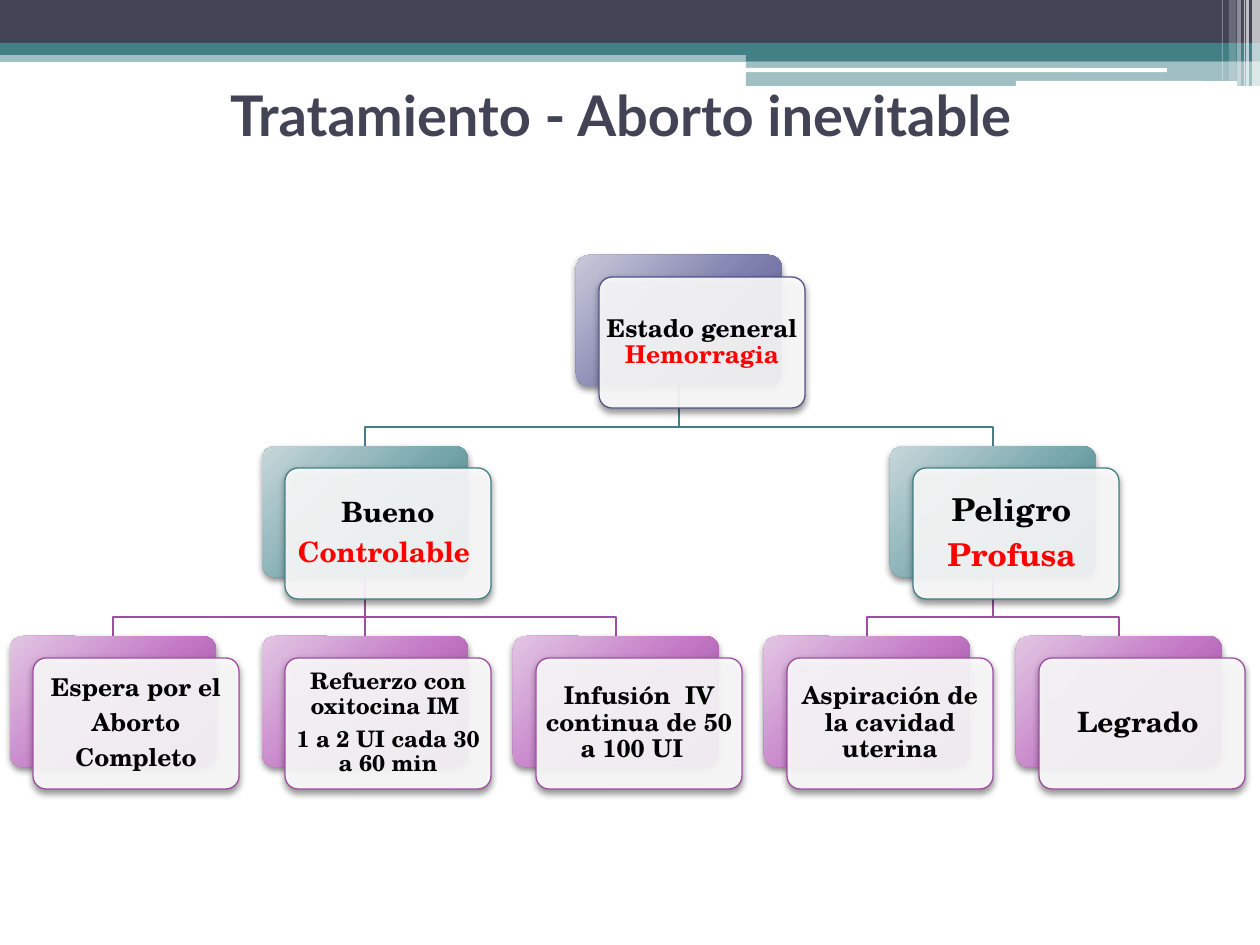
"""Build the slide with the treatment tree for inevitable abortion."""
from dataclasses import dataclass
from typing import Iterator, Optional

from pptx import Presentation
from pptx.dml.color import RGBColor
from pptx.enum.shapes import MSO_CONNECTOR, MSO_SHAPE
from pptx.enum.text import MSO_ANCHOR, PP_ALIGN
from pptx.oxml import parse_xml
from pptx.oxml.ns import nsdecls, qn
from pptx.util import Pt

SCALE = 914400 / 126
COLORS = {
    "ink": "424456", "teal": "438086", "white": "FFFFFF", "black": "000000",
    "red": "FF0000", "indigo": "53548A", "purple": "A04DA3",
}
GRADIENTS = {
    "indigo": ("C9C9DA", "7F80AE", "4D4E81"),
    "teal": ("C7D7DA", "77A7AD", "3E777D"),
    "purple": ("E2C6E3", "C277C5", "954898"),
}
LEVEL_COLORS = ("indigo", "teal", "purple")
TREE_LEFT, TREE_TOP = 10, 255
COLUMN_STEP, LEVEL_STEP = 251.5, 190.5
CARD_WIDTH, CARD_HEIGHT = 206, 131
FRONT_DX, FRONT_DY = 23, 22
BRANCH_GAP = 19

Run = tuple[str, str]
Paragraphs = tuple[tuple[Run, ...], ...]


@dataclass(frozen=True)
class Band:
    left: int
    top: int
    width: int
    height: int
    color: str
    opacity: int = 100
    rounded: bool = False


@dataclass(frozen=True)
class Node:
    paragraphs: Paragraphs
    size: int
    level: int
    column: Optional[int] = None
    children: tuple["Node", ...] = ()

    @property
    def position(self) -> float:
        if not self.children:
            return self.column
        return sum(child.position for child in self.children) / len(self.children)

    @property
    def left(self) -> int:
        return round(TREE_LEFT + COLUMN_STEP * self.position)

    @property
    def top(self) -> int:
        return round(TREE_TOP + LEVEL_STEP * self.level)

    @property
    def center(self) -> int:
        return self.left + CARD_WIDTH // 2

    @property
    def color(self) -> str:
        return LEVEL_COLORS[self.level]


def leaf(column: int, size: int, *lines: str) -> Node:
    return Node(tuple(((line, "black"),) for line in lines), size, 2, column)


HEADER = (
    Band(0, 50, 1260, 12, "teal", 50),
    Band(0, 0, 1260, 43, "ink"),
    Band(0, 43, 1260, 12, "teal"),
    Band(746, 49, 514, 12, "teal"),
    Band(746, 61, 514, 25, "teal", 50),
    Band(745, 68, 422, 4, "white", rounded=True),
    Band(1016, 81, 221, 5, "white", rounded=True),
    Band(1252, 0, 8, 86, "white", 65),
    Band(1246, 0, 3, 86, "white", 65),
    Band(1244, 0, 1, 86, "white", 60),
    Band(1237, 0, 4, 86, "white", 40),
    Band(1229, 0, 7, 81, "white", 20),
    Band(1222, 0, 1, 81, "white", 30),
)
CONTROLLABLE = Node(
    ((("Bueno", "black"),), (("Controlable ", "red"),)), 16, 1,
    children=(
        leaf(0, 14, "Espera por el", "Aborto", "Completo"),
        leaf(1, 13, "Refuerzo con oxitocina IM ", "1 a 2 UI cada 30 a 60 min"),
        leaf(2, 14, "Infusión  IV continua de 50 a 100 UI  "),
    ),
)
PROFUSE = Node(
    ((("Peligro ", "black"),), (("Profusa ", "red"),)), 18, 1,
    children=(
        leaf(3, 14, "Aspiración de la cavidad uterina"),
        leaf(4, 16, "Legrado "),
    ),
)
ASSESSMENT = Node(
    ((("Estado general ", "black"), ("Hemorragia", "red")),), 14, 0,
    children=(CONTROLLABLE, PROFUSE),
)


def px(value: float) -> int:
    return round(value * SCALE)


def rgb(color: str) -> RGBColor:
    return RGBColor.from_string(COLORS[color])


def add_box(slide, left: int, top: int, width: int, height: int, color: str,
            opacity: int = 100, corner: Optional[float] = None):
    kind = MSO_SHAPE.RECTANGLE if corner is None else MSO_SHAPE.ROUNDED_RECTANGLE
    box = slide.shapes.add_shape(kind, px(left), px(top), px(width), px(height))
    if corner is not None:
        box.adjustments[0] = corner
    box.shadow.inherit = False
    box.line.fill.background()
    box.fill.solid()
    box.fill.fore_color.rgb = rgb(color)
    if opacity < 100:
        tint = box.element.spPr.find(qn("a:solidFill")).find(qn("a:srgbClr"))
        tint.append(parse_xml(f'<a:alpha {nsdecls("a")} val="{opacity * 1000}"/>'))
    return box


def add_text(slide, paragraphs: Paragraphs, *, left: int, top: int, width: int,
             height: int, size: int, font: str, inset: int,
             line_spacing: float = 1.0, after_percent: int = 0) -> None:
    frame = slide.shapes.add_textbox(px(left), px(top), px(width), px(height)).text_frame
    frame.word_wrap = True
    frame.vertical_anchor = MSO_ANCHOR.MIDDLE
    frame.margin_left = frame.margin_right = px(inset)
    frame.margin_top = frame.margin_bottom = px(inset)
    for index, runs in enumerate(paragraphs):
        paragraph = frame.add_paragraph() if index else frame.paragraphs[0]
        paragraph.alignment = PP_ALIGN.CENTER
        paragraph.line_spacing = line_spacing
        paragraph._p.get_or_add_pPr().append(parse_xml(
            f'<a:spcAft {nsdecls("a")}><a:spcPct val="{after_percent * 1000}"/></a:spcAft>'))
        for words, color in runs:
            run = paragraph.add_run()
            run.text = words
            run.font.size, run.font.name, run.font.bold = Pt(size), font, True
            run.font.color.rgb = rgb(color)


def add_soft_shadow(box) -> None:
    box.element.spPr.find(qn("a:effectLst")).append(parse_xml(
        f'<a:outerShdw {nsdecls("a")} blurRad="{Pt(4)}" dist="{Pt(2)}" dir="5400000" '
        'rotWithShape="0"><a:srgbClr val="000000"><a:alpha val="45000"/>'
        '</a:srgbClr></a:outerShdw>'))


def apply_gradient(box, color: str) -> None:
    stops = "".join(f'<a:gs pos="{position}"><a:srgbClr val="{shade}"/></a:gs>'
                    for position, shade in zip((0, 55000, 100000), GRADIENTS[color]))
    properties = box.element.spPr
    properties.replace(properties.find(qn("a:solidFill")), parse_xml(
        f'<a:gradFill {nsdecls("a")} rotWithShape="1"><a:gsLst>{stops}</a:gsLst>'
        '<a:path path="circle"><a:fillToRect l="-40000" t="-90000" r="140000" '
        'b="190000"/></a:path></a:gradFill>'))


def add_branch(slide, parent: Node, child: Node) -> None:
    start, bar = parent.top + CARD_HEIGHT, child.top - BRANCH_GAP
    if parent.center == child.center:
        branch = slide.shapes.add_connector(
            MSO_CONNECTOR.STRAIGHT, px(parent.center), px(start), px(child.center), px(child.top))
        branch.element.spPr.append(parse_xml(f'<a:effectLst {nsdecls("a")}/>'))
    else:
        builder = slide.shapes.build_freeform(parent.center, start, scale=SCALE)
        builder.add_line_segments(
            [(parent.center, bar), (child.center, bar), (child.center, child.top)], close=False)
        branch = builder.convert_to_shape()
        branch.fill.background()
        branch.shadow.inherit = False
    branch.line.color.rgb = rgb(child.color)
    branch.line.width = Pt(1.5)


def add_card(slide, node: Node) -> None:
    back = add_box(slide, node.left, node.top, CARD_WIDTH, CARD_HEIGHT, node.color, corner=0.1)
    apply_gradient(back, node.color)
    add_soft_shadow(back)
    left, top = node.left + FRONT_DX, node.top + FRONT_DY
    front = add_box(slide, left, top, CARD_WIDTH, CARD_HEIGHT, "white", 90, corner=0.1)
    front.line.color.rgb = rgb(node.color)
    front.line.width = Pt(0.75)
    add_soft_shadow(front)
    add_text(slide, node.paragraphs, left=left, top=top, width=CARD_WIDTH,
             height=CARD_HEIGHT, size=node.size, font="TeX Gyre Schola",
             inset=node.size // 2, line_spacing=0.9, after_percent=35)


def walk(node: Node) -> Iterator[Node]:
    yield node
    for child in node.children:
        yield from walk(child)


def main() -> None:
    deck = Presentation()
    deck.slide_width, deck.slide_height = px(1260), px(945)
    slide = deck.slides.add_slide(deck.slide_layouts[6])
    for band in HEADER:
        add_box(slide, band.left, band.top, band.width, band.height, band.color,
                band.opacity, 0.167 if band.rounded else None)
    add_text(slide, ((("Tratamiento - Aborto inevitable", "ink"),),), left=54, top=55,
             width=1134, height=118, size=32, font="Lato", inset=6)
    nodes = list(walk(ASSESSMENT))
    for parent in nodes:
        for child in parent.children:
            add_branch(slide, parent, child)
    for node in nodes:
        add_card(slide, node)
    deck.save("out.pptx")


if __name__ == "__main__":
    main()
